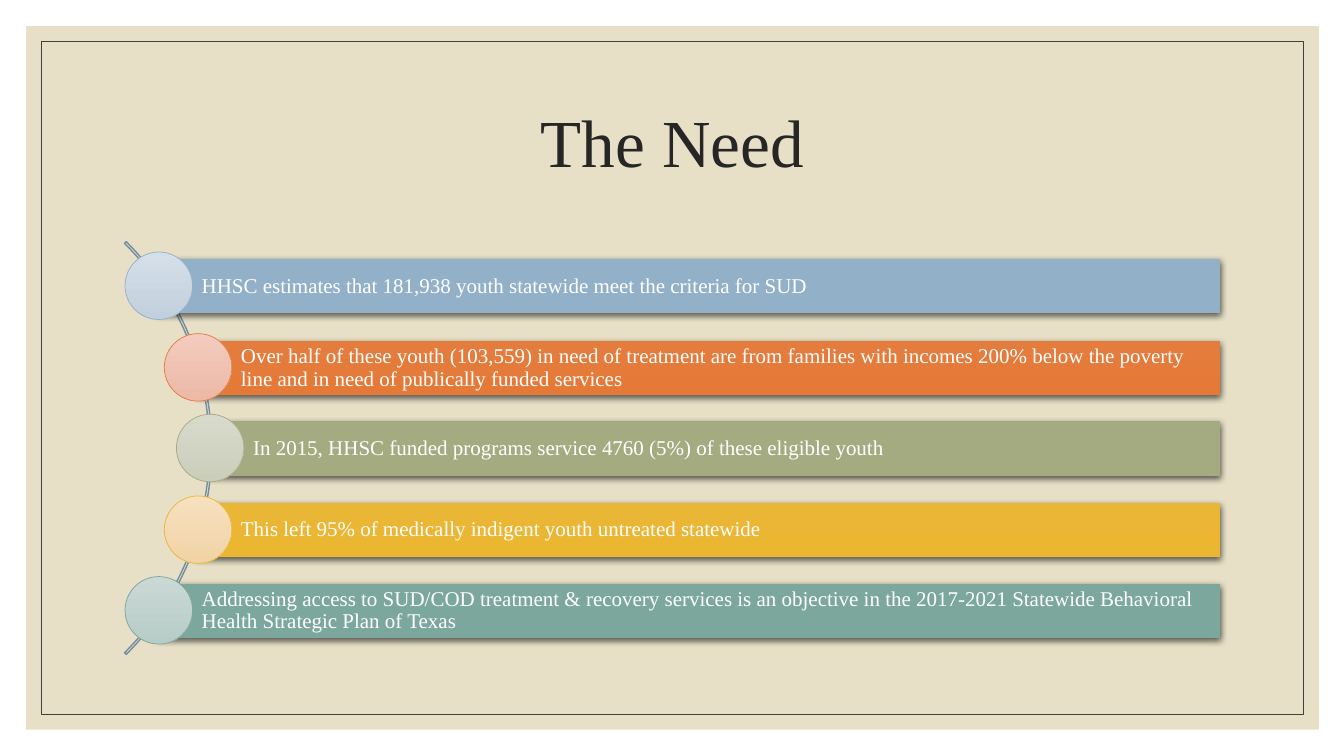
"""Build the slide on the need for youth treatment."""
from dataclasses import dataclass

from lxml.etree import SubElement
from pptx import Presentation
from pptx.dml.color import RGBColor as Rgb
from pptx.dml.fill import FillFormat as Fill
from pptx.enum.shapes import MSO_SHAPE as Kind
from pptx.enum.text import MSO_ANCHOR as Anchor, PP_ALIGN as Align
from pptx.oxml.ns import qn
from pptx.shapes.autoshape import Shape
from pptx.slide import Slide
from pptx.text.text import TextFrame
from pptx.util import Emu, Pt

PX = 9144
FONT = "Times New Roman"
WHITE = Rgb(0xFF, 0xFF, 0xFF)
SAND = Rgb(0xE7, 0xE0, 0xC7)
EDGE = Rgb(0x40, 0x40, 0x40)
INK = Rgb(0x26, 0x26, 0x26)
SLATE = Rgb(0x75, 0x8D, 0xA0)
BLUE, BLUE_END = Rgb(0x92, 0xB0, 0xC8), Rgb(0x8F, 0xAF, 0xC8)
RUST, RUST_END = Rgb(0xE3, 0x7C, 0x3D), Rgb(0xE5, 0x7A, 0x38)
SAGE, SAGE_END = Rgb(0xA5, 0xAB, 0x81), Rgb(0xA4, 0xAB, 0x7F)
GOLD, GOLD_END = Rgb(0xE9, 0xB6, 0x35), Rgb(0xEB, 0xB6, 0x30)
TEAL, TEAL_END = Rgb(0x7B, 0xA7, 0x9D), Rgb(0x79, 0xA7, 0x9C)
PALE_BLUE, PALE_BLUE_END = Rgb(0xD4, 0xDF, 0xE8), Rgb(0xC2, 0xD0, 0xDD)
PALE_RUST, PALE_RUST_END = Rgb(0xF3, 0xCC, 0xBF), Rgb(0xED, 0xB8, 0xA6)
PALE_SAGE, PALE_SAGE_END = Rgb(0xD8, 0xDB, 0xCC), Rgb(0xCB, 0xCE, 0xBA)
PALE_GOLD, PALE_GOLD_END = Rgb(0xF6, 0xE0, 0xBF), Rgb(0xF1, 0xD3, 0xA5)
PALE_TEAL, PALE_TEAL_END = Rgb(0xCA, 0xD9, 0xD5), Rgb(0xB8, 0xCC, 0xC7)

RIGHT, TOP, TALL, DOT = 1210, 257, 54, 67
TWO_STEPS = 161


@dataclass(frozen=True)
class Point:
    left: int
    bar: tuple[Rgb, Rgb]
    dot: tuple[Rgb, Rgb]
    text: str


POINTS = [
    Point(157, (BLUE, BLUE_END), (PALE_BLUE, PALE_BLUE_END),
          "HHSC estimates that 181,938 youth statewide meet the criteria for SUD"),
    Point(196, (RUST, RUST_END), (PALE_RUST, PALE_RUST_END),
          "Over half of these youth (103,559) in need of treatment are from families "
          "with incomes 200% below the poverty line and in need of publically funded services"),
    Point(208, (SAGE, SAGE_END), (PALE_SAGE, PALE_SAGE_END),
          "In 2015, HHSC funded programs service 4760 (5%) of these eligible youth"),
    Point(196, (GOLD, GOLD_END), (PALE_GOLD, PALE_GOLD_END),
          "This left 95% of medically indigent youth untreated statewide"),
    Point(157, (TEAL, TEAL_END), (PALE_TEAL, PALE_TEAL_END),
          "Addressing access to SUD/COD treatment & recovery services is an objective "
          "in the 2017-2021 Statewide Behavioral Health Strategic Plan of Texas"),
]


def px(size: int) -> Emu:
    return Emu(size * PX)


def add(slide: Slide, kind: Kind, left: int, top: int, wide: int, tall: int,
        line: Rgb | None = None, weight: float = 0.5) -> Shape:
    shape = slide.shapes.add_shape(kind, px(left), px(top), px(wide), px(tall))
    shape.shadow.inherit = False
    shape.fill.background()
    if line is None:
        shape.line.fill.background()
    else:
        shape.line.color.rgb = line
        shape.line.width = Pt(weight)
    return shape


def blend(fill: Fill, tones: tuple[Rgb, Rgb]) -> None:
    fill.gradient()
    fill.gradient_angle = 270
    for stop, tone in zip(fill.gradient_stops, tones):
        stop.color.rgb = tone


def shade(shape: Shape) -> None:
    effects = shape._element.spPr.find(qn("a:effectLst"))
    cast = SubElement(effects, qn("a:outerShdw"), blurRad=str(Pt(4.5)),
                      dist=str(Pt(1.5)), dir="5400000", algn="ctr", rotWithShape="0")
    tone = SubElement(cast, qn("a:srgbClr"), val="000000")
    SubElement(tone, qn("a:alpha"), val="63000")


def write(frame: TextFrame, text: str, size: int, color: Rgb, align: Align) -> None:
    frame.text = text
    frame.word_wrap = True
    frame.vertical_anchor = Anchor.MIDDLE
    para = frame.paragraphs[0]
    para.alignment = align
    para.line_spacing = 0.9
    para.font.name = FONT
    para.font.size = Pt(size)
    para.font.color.rgb = color


def draw_point(slide: Slide, point: Point, top: int) -> None:
    bar = add(slide, Kind.RECTANGLE, point.left, top, RIGHT - point.left, TALL)
    blend(bar.fill, point.bar)
    shade(bar)
    frame = bar.text_frame
    frame.margin_left = px(43)
    frame.margin_top = frame.margin_right = frame.margin_bottom = px(4)
    write(frame, point.text, 15, WHITE, Align.LEFT)
    dot = add(slide, Kind.OVAL, point.left - DOT // 2, top - (DOT - TALL) // 2 - 1,
              DOT, DOT, point.bar[0])
    blend(dot.fill, point.dot)


def main() -> None:
    deck = Presentation()
    deck.slide_width, deck.slide_height = px(1333), px(750)
    slide = deck.slides.add_slide(deck.slide_layouts[5])
    title = slide.shapes.title
    title.left, title.top, title.width, title.height = px(117), px(70), px(1100), px(150)
    write(title.text_frame, "The Need", 48, INK, Align.CENTER)

    panel = add(slide, Kind.RECTANGLE, 26, 26, 1282, 698)
    panel.fill.solid()
    panel.fill.fore_color.rgb = SAND
    border = add(slide, Kind.RECTANGLE, 41, 41, 1252, 668, EDGE)
    for back in (panel, border):
        title._element.addprevious(back._element)

    arc = add(slide, Kind.BLOCK_ARC, -369, 155, 579, 579, SLATE, 1)
    for spot, value in enumerate((189, 27, 0.004)):
        arc.adjustments[spot] = value
    for row, point in enumerate(POINTS):
        draw_point(slide, point, TOP + (TWO_STEPS * row + 1) // 2)
    deck.save("out.pptx")


if __name__ == "__main__":
    main()
